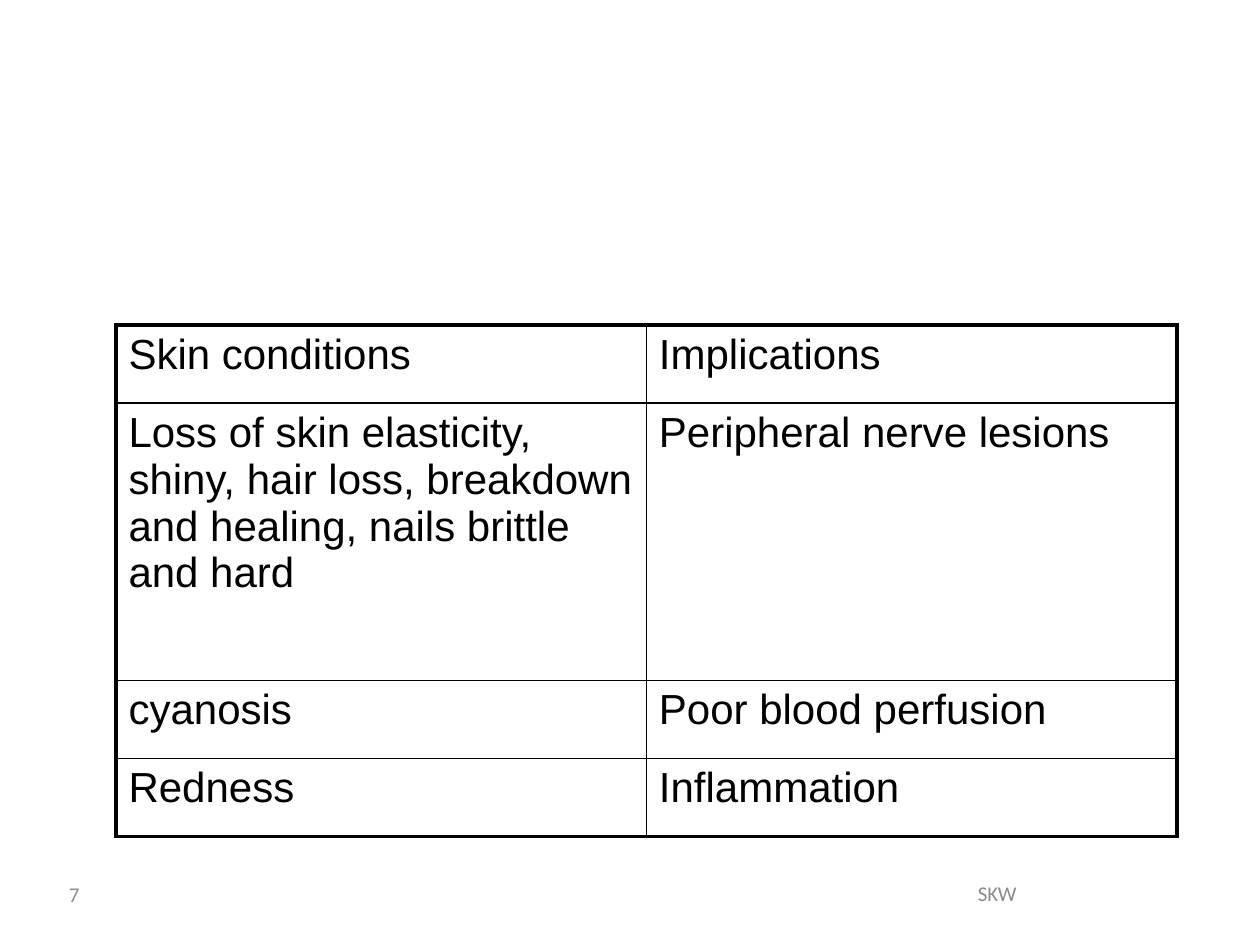
from lxml.etree import SubElement
from pptx import Presentation
from pptx.dml.color import RGBColor
from pptx.enum.text import MSO_ANCHOR as Anchor, PP_ALIGN as Align
from pptx.oxml.ns import qn
from pptx.util import Inches, Pt

BLACK = RGBColor(0x00, 0x00, 0x00)
GREY = RGBColor(0x8C, 0x8C, 0x8C)
OUTER, INNER = 2.25, 1

FINDINGS = [
    ("Skin conditions", "Implications"),
    ("Loss of skin elasticity, shiny, hair loss, breakdown and healing, "
     "nails brittle and hard", "Peripheral nerve lesions"),
    ("cyanosis", "Poor blood perfusion"),
    ("Redness", "Inflammation"),
]
ROW_HEIGHTS = [0.62, 2.2, 0.62, 0.62]
COLUMN_WIDTH = 4.21
TABLE_LEFT, TABLE_TOP = 0.92, 2.58

FOOTERS = [
    ("7", (0.09, 6.83, 0.64, 0.53), Align.RIGHT),
    ("SKW", (6.33, 6.83, 3.17, 0.52), Align.CENTER),
]


def write(frame, text, font="Calibri", size=12, color=GREY, align=Align.LEFT,
          before_percent=0):
    frame.word_wrap = True
    paragraph = frame.paragraphs[0]
    paragraph.alignment = align
    if before_percent:
        spacing = SubElement(paragraph._p.get_or_add_pPr(), qn("a:spcBef"))
        SubElement(spacing, qn("a:spcPct"), val=str(before_percent * 1000))
    run = paragraph.add_run()
    run.text = text
    run.font.name = font
    run.font.size = Pt(size)
    run.font.color.rgb = color


def set_borders(cell, **widths):
    properties = cell._tc.get_or_add_tcPr()
    for side in "LRTB":
        line = SubElement(properties, qn(f"a:ln{side}"), w=str(Pt(widths[side])))
        fill = SubElement(line, qn("a:solidFill"))
        SubElement(fill, qn("a:srgbClr"), val=str(BLACK))


def add_findings(slide):
    rows, columns = len(FINDINGS), len(FINDINGS[0])
    table = slide.shapes.add_table(
        rows, columns, Inches(TABLE_LEFT), Inches(TABLE_TOP),
        Inches(COLUMN_WIDTH * columns), Inches(sum(ROW_HEIGHTS))).table
    table.first_row = table.horz_banding = False
    for column in table.columns:
        column.width = Inches(COLUMN_WIDTH)
    for r, (height, texts) in enumerate(zip(ROW_HEIGHTS, FINDINGS)):
        table.rows[r].height = Inches(height)
        for c, text in enumerate(texts):
            cell = table.cell(r, c)
            write(cell.text_frame, text, font="Arial", size=24, color=BLACK,
                  before_percent=20)
            set_borders(cell,
                        L=OUTER if c == 0 else INNER,
                        R=OUTER if c == columns - 1 else INNER,
                        T=OUTER if r == 0 else INNER,
                        B=OUTER if r == rows - 1 else INNER)
            cell.fill.background()


def main():
    deck = Presentation()
    deck.slide_width, deck.slide_height = Inches(10), Inches(7.5)
    slide = deck.slides.add_slide(deck.slide_layouts[6])
    add_findings(slide)
    for text, place, align in FOOTERS:
        frame = slide.shapes.add_textbox(*map(Inches, place)).text_frame
        frame.vertical_anchor = Anchor.MIDDLE
        write(frame, text, align=align)
    deck.save("out.pptx")


if __name__ == "__main__":
    main()
